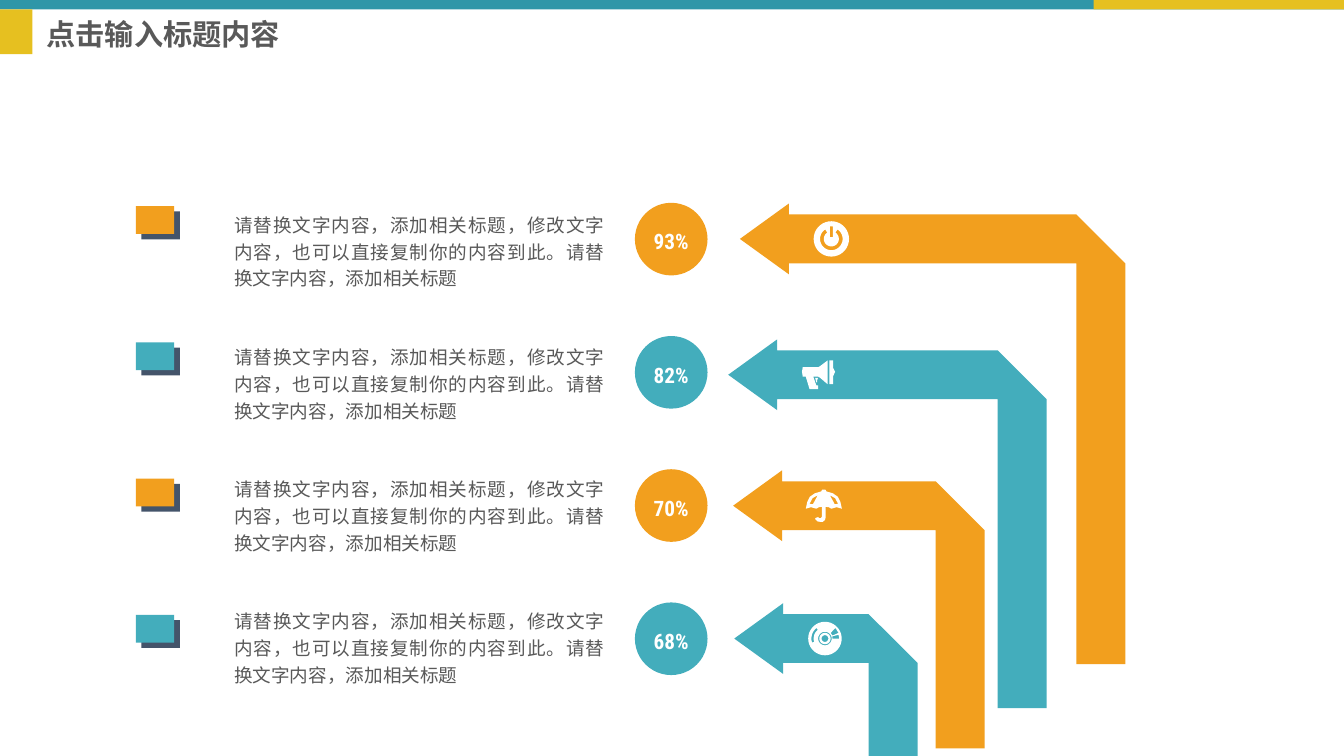
import dataclasses
import math

import pptx
import pptx.dml.color
import pptx.enum.shapes
import pptx.enum.text
import pptx.util

Cm = pptx.util.Cm
RECTANGLE = pptx.enum.shapes.MSO_SHAPE.RECTANGLE
OVAL = pptx.enum.shapes.MSO_SHAPE.OVAL
ALIGN = pptx.enum.text.PP_ALIGN
ANCHOR = pptx.enum.text.MSO_ANCHOR


@dataclasses.dataclass(frozen=True)
class Theme:
    font: str = "Roboto Condensed"
    header: str = "2F96A8"
    accent: str = "E6C020"
    orange: str = "F29F1E"
    teal: str = "43ADBC"
    shade: str = "44546A"
    text: str = "595959"
    white: str = "FFFFFF"
    title_size: int = 22
    percent_size: int = 16
    body_size: int = 14


def arc(radius, start=0, end=360, step=10):
    """Points around the origin; degrees run clockwise from the right."""
    count = max(2, round(abs(end - start) / step))
    angles = [math.radians(start + (end - start) * i / count) for i in range(count + 1)]
    return [(radius * math.cos(a), radius * math.sin(a)) for a in angles]


def band(outer, inner, start, end):
    return arc(outer, start, end) + arc(inner, end, start)


def mirror(points):
    return [(-x, y) for x, y in reversed(points)]


# Icon outlines in centimetres around the icon's centre; inner outlines are holes.
POWER = [
    arc(0.47),
    [(-0.04, -0.33), (0.04, -0.33), (0.04, -0.05), (-0.04, -0.05)],
    band(0.3, 0.2, -57, 237),
]
MEGAPHONE = [
    [(-0.42, -0.2), (-0.01, -0.2), (0.04, -0.23), (0.24, -0.38), (0.24, 0.25),
     (0.04, 0.08), (-0.01, 0.05), (-0.14, 0.05), (-0.06, 0.28), (-0.01, 0.28),
     (-0.01, 0.38), (-0.24, 0.38), (-0.34, 0.05), (-0.42, 0.05), (-0.44, -0.08)],
    [(0.39, -0.18), (0.44, -0.08), (0.39, 0.03), (0.39, 0.25),
     (0.29, 0.25), (0.29, -0.38), (0.39, -0.38)],
    [(-0.01, 0.08), (-0.09, 0.08), (-0.06, 0.2), (-0.04, 0.2), (-0.04, 0.15)],
]
CANOPY = [(-0.05, 0.03), (-0.13, 0.04), (-0.2, 0.08), (-0.34, 0.04), (-0.48, 0.08),
          (-0.44, -0.1), (-0.37, -0.24), (-0.24, -0.33), (-0.07, -0.38), (-0.04, -0.43)]
HANDLE = [(0.05, 0.3), (0.03, 0.38), (-0.03, 0.43), (-0.08, 0.43), (-0.16, 0.42),
          (-0.22, 0.37), (-0.23, 0.33), (-0.15, 0.3), (-0.13, 0.33), (-0.08, 0.33),
          (-0.05, 0.29)]
PANEL = [(-0.38, -0.05), (-0.29, -0.04), (-0.23, -0.15), (-0.16, -0.28), (-0.3, -0.2)]
UMBRELLA = [CANOPY + mirror(CANOPY) + HANDLE, PANEL, mirror(PANEL)]
DISC = [
    arc(0.445),
    arc(0.18),
    arc(0.15),
    arc(0.09),
    band(0.36, 0.3, 163, 231),
    [(0.15, -0.15), (0.28, -0.28), (0.36, -0.15), (0.2, -0.08)],
    [(0.2, -0.06), (0.36, -0.1), (0.38, 0), (0.2, 0)],
]


class SlideBuilder:
    def __init__(self, slide, theme):
        self.slide = slide
        self.theme = theme

    def paint(self, shape, color):
        shape.shadow.inherit = False
        shape.fill.solid()
        shape.fill.fore_color.rgb = pptx.dml.color.RGBColor.from_string(color)
        shape.line.fill.background()

    def shape(self, kind, left, top, width, height, color):
        shape = self.slide.shapes.add_shape(kind, Cm(left), Cm(top), Cm(width), Cm(height))
        self.paint(shape, color)

    def outline(self, center_x, center_y, contours, color):
        placed = [[(Cm(center_x + x), Cm(center_y + y)) for x, y in contour]
                  for contour in contours]
        builder = self.slide.shapes.build_freeform(*placed[0][0])
        for index, points in enumerate(placed):
            if index:
                builder.move_to(*points[0])
            builder.add_line_segments(points[1:], close=True)
        self.paint(builder.convert_to_shape(), color)

    def arrow(self, tip, middle, right, bottom, color):
        """Left-pointing arrow whose shaft turns down at a cut corner."""
        thickness, head = 1.3, 0.94
        half = thickness / 2
        neck, inside = tip + thickness, right - thickness
        self.outline(0, 0, [[
            (tip, middle), (neck, middle - head), (neck, middle - half),
            (inside, middle - half), (right, middle + half), (right, bottom),
            (inside, bottom), (inside, middle + half), (neck, middle + half),
            (neck, middle + head)]], color)

    def text(self, left, top, width, height, words, size, color, bold=False, wrap=True,
             align=ALIGN.LEFT, anchor=ANCHOR.TOP, spacing=1.2, before=0):
        box = self.slide.shapes.add_textbox(Cm(left), Cm(top), Cm(width), Cm(height))
        frame = box.text_frame
        frame.word_wrap = wrap
        frame.vertical_anchor = anchor
        paragraph = frame.paragraphs[0]
        paragraph.text = words
        paragraph.alignment = align
        paragraph.line_spacing = spacing
        paragraph.space_before = pptx.util.Pt(before)
        paragraph.font.name = self.theme.font
        paragraph.font.size = pptx.util.Pt(size)
        paragraph.font.bold = bold
        paragraph.font.color.rgb = pptx.dml.color.RGBColor.from_string(color)

    def swatch(self, left, top, color):
        width, height = 1.02, 0.74
        self.shape(RECTANGLE, left + 0.15, top + 0.14, width, height, self.theme.shade)
        self.shape(RECTANGLE, left, top, width, height, color)

    def badge(self, left, top, percent):
        diameter = 1.93
        color = self.theme.orange if percent in ("93%", "70%") else self.theme.teal
        self.shape(OVAL, left, top, diameter, diameter, color)
        self.text(left + 0.2, top + 0.43, 1.53, 0.99, percent, self.theme.percent_size,
                  self.theme.white, bold=True, wrap=False, align=ALIGN.CENTER)


BODY = "请替换文字内容，添加相关标题，修改文字内容，也可以直接复制你的内容到此。请替换文字内容，添加相关标题"

# Percentage, arrow (tip, middle, right, bottom), icon and its horizontal centre
ROWS = [
    ("93%", (19.66, 6.35, 29.9, 17.65), POWER, 22.09),
    ("82%", (19.35, 9.96, 27.81, 18.82), MEGAPHONE, 21.75),
    ("70%", (19.48, 13.44, 26.16, 19.89), UMBRELLA, 21.89),
    ("68%", (19.51, 16.97, 24.38, 20.98), DISC, 21.92),
]


def main():
    presentation = pptx.Presentation()
    presentation.slide_width = Cm(35.71)
    presentation.slide_height = Cm(20.09)
    theme = Theme()
    builder = SlideBuilder(presentation.slides.add_slide(presentation.slide_layouts[6]), theme)

    builder.shape(RECTANGLE, 0, 0, 35.71, 0.25, theme.header)
    builder.shape(RECTANGLE, 29.06, 0, 6.65, 0.25, theme.accent)
    builder.shape(RECTANGLE, 0, 0.25, 0.86, 1.19, theme.accent)
    builder.text(0.99, 0.36, 9.19, 1.19, "点击输入标题内容", theme.title_size, theme.text,
                 bold=True, anchor=ANCHOR.MIDDLE, spacing=0.9, before=10)

    for index, (percent, arrow, icon, icon_x) in enumerate(ROWS):
        color = (theme.orange, theme.teal)[index % 2]
        builder.swatch(3.61, 5.48 + 3.62 * index, color)
        builder.text(5.97, 5.44 + 3.51 * index, 10.34, 2.41, BODY, theme.body_size,
                     theme.text, align=ALIGN.JUSTIFY)
        builder.badge(16.87, 5.39 + 3.54 * index, percent)
        builder.arrow(*arrow, color)
        builder.outline(icon_x, arrow[1], icon, theme.white)

    presentation.save("out.pptx")


if __name__ == "__main__":
    main()
